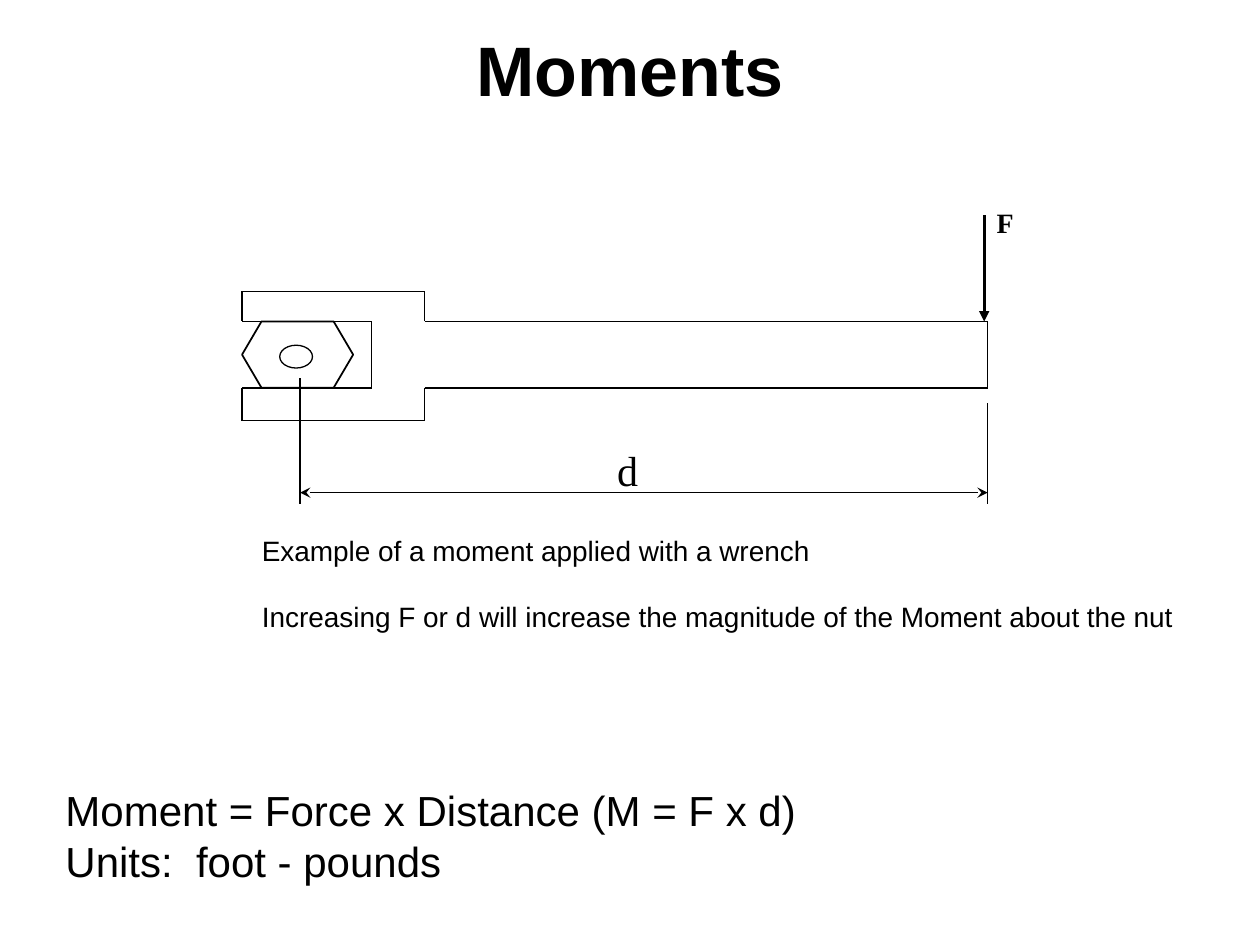
import itertools
import pptx
import pptx.util
import pptx.dml.color
import pptx.enum.shapes
import pptx.enum.text
import pptx.oxml
import pptx.oxml.ns
from pptx.util import Cm, Pt

COLORS = {"ink": "000000", "paper": "FFFFFF"}
SANS, SERIF = "Arial", "Times New Roman"
ANCHOR = pptx.enum.text.MSO_ANCHOR
SHAPE = pptx.enum.shapes.MSO_SHAPE

TITLE = "Moments"

JAW_LEFT, SLOT_END, JAW_RIGHT, HANDLE_END = 4.88, 7.49, 8.56, 19.91
JAW_TOP, HANDLE_TOP, HANDLE_BOTTOM, JAW_BOTTOM = 5.87, 6.48, 7.82, 8.48
NUT_CENTER, FORCE_X = 6.05, 19.84
DIMENSION_Y, EXTENSION_END = 9.93, 10.16

WRENCH_OUTLINE = [
    (JAW_LEFT, HANDLE_TOP), (SLOT_END, HANDLE_TOP),
    (SLOT_END, HANDLE_BOTTOM), (JAW_LEFT, HANDLE_BOTTOM),
    (JAW_LEFT, JAW_BOTTOM), (JAW_RIGHT, JAW_BOTTOM),
    (JAW_RIGHT, HANDLE_BOTTOM), (HANDLE_END, HANDLE_BOTTOM),
    (HANDLE_END, HANDLE_TOP), (JAW_RIGHT, HANDLE_TOP),
    (JAW_RIGHT, JAW_TOP), (JAW_LEFT, JAW_TOP), (JAW_LEFT, HANDLE_TOP),
]

ANNOTATION_LINES = [
    ((NUT_CENTER, 7.62), (NUT_CENTER, EXTENSION_END), 0.75, {}),
    ((HANDLE_END, 8.13), (HANDLE_END, EXTENSION_END), 0.75, {}),
    ((NUT_CENTER, DIMENSION_Y), (HANDLE_END, DIMENSION_Y), 0.75,
     {"headEnd": "stealth", "tailEnd": "stealth"}),
    ((FORCE_X, 4.34), (FORCE_X, HANDLE_TOP), 1.5, {"tailEnd": "triangle"}),
]

TEXTS = [
    {"box": (12.19, 8.84, 1.68, 1.09), "lines": ["d"], "font": SERIF, "size": 24},
    {"box": (19.84, 4.01, 1.9, 1.09), "lines": ["F"], "font": SERIF, "size": 16,
     "bold": True},
    {"box": (5.03, 10.62, 18.95, 2.29), "font": SANS, "size": 16, "gap": 18.4,
     "wrap": False, "anchor": ANCHOR.MIDDLE,
     "lines": ["Example of a moment applied with a wrench",
               "Increasing F or d will increase the magnitude of the Moment about the nut"]},
    {"box": (1.07, 15.7, 19.69, 2.29), "font": SANS, "size": 24,
     "lines": ["Moment = Force x Distance (M = F x d)", "Units:  foot - pounds"]},
]


def color(name):
    return pptx.dml.color.RGBColor.from_string(COLORS[name])


def add_run(paragraph, text, font, size, bold=False):
    run = paragraph.add_run()
    run.text = text
    run.font.name = font
    run.font.size = Pt(size)
    run.font.bold = bold
    run.font.color.rgb = color("ink")


def add_line(slide, start, end, width=0.75, arrows=None):
    connector = slide.shapes.add_connector(
        pptx.enum.shapes.MSO_CONNECTOR.STRAIGHT, *map(Cm, start + end))
    connector.line.color.rgb = color("ink")
    connector.line.width = Pt(width)
    line = connector.line._get_or_add_ln()
    for tag, kind in (arrows or {}).items():
        arrow = pptx.oxml.parse_xml(
            f'<a:{tag} {pptx.oxml.ns.nsdecls("a")} type="{kind}"/>')
        line.append(arrow)
    connector._element.spPr.append(
        pptx.oxml.parse_xml(f'<a:effectLst {pptx.oxml.ns.nsdecls("a")}/>'))


def add_outline(slide, kind, box, width):
    shape = slide.shapes.add_shape(kind, *map(Cm, box))
    shape.shadow.inherit = False
    shape.fill.solid()
    shape.fill.fore_color.rgb = color("paper")
    shape.line.color.rgb = color("ink")
    shape.line.width = Pt(width)
    return shape


def add_text(slide, item):
    frame = slide.shapes.add_textbox(*map(Cm, item["box"])).text_frame
    frame.word_wrap = item.get("wrap", True)
    frame.vertical_anchor = item.get("anchor", ANCHOR.TOP)
    for index, text in enumerate(item["lines"]):
        paragraph = frame.add_paragraph() if index else frame.paragraphs[0]
        if index:
            paragraph.space_before = Pt(item.get("gap", 0))
        add_run(paragraph, text, item["font"], item["size"], item.get("bold", False))


def add_title(slide):
    title = slide.shapes.title
    title.left, title.top, title.width, title.height = map(Cm, (0, 0, 25.4, 3.18))
    title.text_frame.vertical_anchor = ANCHOR.MIDDLE
    paragraph = title.text_frame.paragraphs[0]
    paragraph.alignment = pptx.enum.text.PP_ALIGN.CENTER
    paragraph.line_spacing = 0.7
    add_run(paragraph, TITLE, SANS, 40, True)


def main():
    presentation = pptx.Presentation()
    presentation.slide_width, presentation.slide_height = Cm(25.4), Cm(19.05)
    slide = presentation.slides.add_slide(presentation.slide_layouts[5])
    add_title(slide)
    nut = add_outline(slide, SHAPE.HEXAGON,
                      (JAW_LEFT, HANDLE_TOP, 2.24, HANDLE_BOTTOM - HANDLE_TOP), 1)
    nut.adjustments[0] = 0.294
    for start, end in itertools.pairwise(WRENCH_OUTLINE):
        add_line(slide, start, end)
    add_outline(slide, SHAPE.OVAL, (5.64, 6.96, 0.66, 0.46), 0.75)
    for annotation in ANNOTATION_LINES:
        add_line(slide, *annotation)
    for item in TEXTS:
        add_text(slide, item)
    presentation.save("out.pptx")


if __name__ == "__main__":
    main()
